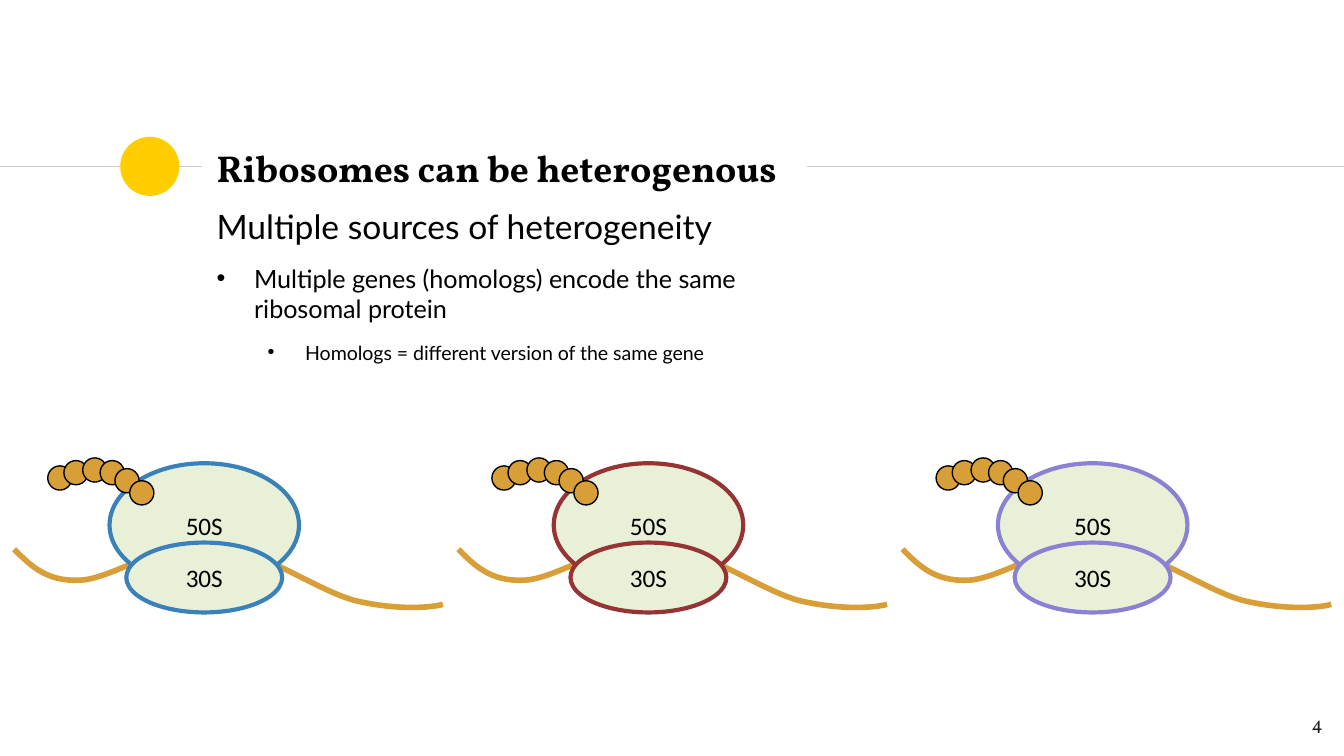
from pptx import Presentation
from pptx import util as u
from pptx.dml.color import RGBColor
from pptx.enum import shapes, text
from pptx.oxml import parse_xml
from pptx.oxml.ns import nsdecls, qn

BLACK = RGBColor(0x00, 0x00, 0x00)
INK = RGBColor(0x1D, 0x1D, 0x1B)
WHITE = RGBColor(0xFF, 0xFF, 0xFF)
GREY = RGBColor(0xCC, 0xCC, 0xCC)
YELLOW = RGBColor(0xFF, 0xCD, 0x00)
GREEN = RGBColor(0xE8, 0xF0, 0xD8)
OCHRE = RGBColor(0xD8, 0x9F, 0x39)
BLUE = RGBColor(0x3A, 0x81, 0xBA)
RED = RGBColor(0x96, 0x33, 0x34)
VIOLET = RGBColor(0x8B, 0x81, 0xD2)

COLS, ROWS = 100, 56.25
WIDTH, HEIGHT = u.Inches(10), u.Inches(5.625)
OVAL = shapes.MSO_SHAPE.OVAL
ALIGN = text.PP_ALIGN
STRAND = [(0, 6.8), (1.2, 8), (2.4, 9.2), (4.8, 9.1), (7.2, 9.1),
          (11.2, 6.1), (14.6, 6.4), (18, 6.6), (22.4, 9.8),
          (25.3, 10.6), (28.2, 11.3), (30.8, 11.2), (31.9, 10.9)]
BEADS = [(2.5, 0.6), (3.7, 0.2), (5.1, 0), (6.4, 0.2), (7.5, 0.8), (8.6, 1.7)]


def col(n):
    return round(WIDTH * n / COLS)


def row(n):
    return round(HEIGHT * n / ROWS)


def grid(x, y, w, h):
    return col(x), row(y), col(w), row(h)


def write(para, words, font="Lato", size=18, color=BLACK, bold=False,
          align=ALIGN.LEFT, after=0, bullet=None, indent=0):
    run = para.add_run()
    run.text = words
    face = run.font
    face.name, face.size, face.bold = font, u.Pt(size), bold
    face.color.rgb = color
    para.alignment = align
    para.space_after = u.Pt(after)
    if bullet:
        props = para._p.get_or_add_pPr()
        props.set("marL", str(col(indent)))
        props.set("indent", str(-col(2.8)))
        props.append(parse_xml(f'<a:buFont {nsdecls("a")} typeface="Arial"/>'))
        props.append(parse_xml(f'<a:buChar {nsdecls("a")} char="{bullet}"/>'))


def frame(parent, box, pad, anchor=text.MSO_ANCHOR.TOP):
    area = parent.add_textbox(*grid(*box)).text_frame
    area.word_wrap = True
    area.vertical_anchor = anchor
    area.margin_left = area.margin_right = col(1)
    area.margin_top = area.margin_bottom = row(pad)
    return area


def solid(parent, kind, box, fill, line=None, width=0.75):
    item = parent.add_shape(kind, *grid(*box))
    item.shadow.inherit = False
    item.fill.solid()
    item.fill.fore_color.rgb = fill
    if line is None:
        item.line.fill.background()
    else:
        item.line.color.rgb = line
        item.line.width = u.Pt(width)
    return item


def rule(parent, left, right, y):
    item = parent.add_connector(shapes.MSO_CONNECTOR.STRAIGHT,
                                col(left), row(y), col(right), row(y))
    item.line.color.rgb = GREY
    item.line.width = u.Pt(0.75)
    item._element.spPr.append(parse_xml(f'<a:effectLst {nsdecls("a")}/>'))


def header(parent, x, y, w, h):
    mid = y + h / 2
    rule(parent, x, x + 15, mid)
    solid(parent, OVAL, (x + 8.95, mid - 2.2, 4.4, 4.4), YELLOW)
    rule(parent, x + 57.6, x + w, mid)
    solid(parent, shapes.MSO_SHAPE.RECTANGLE, (x + 54.35, y, 5.6, h),
          WHITE, WHITE, 2)
    area = frame(parent, (x + 15.13, y, 45.4, 4.7), 1, text.MSO_ANCHOR.MIDDLE)
    write(area.paragraphs[0], "Ribosomes can be heterogenous",
          font="Vollkorn", size=20, bold=True)


def body(parent, x, y, w, h):
    area = frame(parent, (x, y, w, h), 0.5)
    area.auto_size = text.MSO_AUTO_SIZE.SHAPE_TO_FIT_TEXT
    write(area.paragraphs[0], "Multiple sources of heterogeneity", after=9)
    write(area.add_paragraph(),
          "Multiple genes (homologs) encode the same ribosomal protein",
          size=13.5, after=9, bullet="•", indent=2.8)
    para = area.add_paragraph()
    para.level = 1
    write(para, "Homologs = different version of the same gene",
          size=10.5, after=9, bullet="•", indent=6.6)


def bend(item):
    lines = list(item._element.iter(qn("a:lnTo")))
    for k in range(0, len(lines), 3):
        cubic = parse_xml(f'<a:cubicBezTo {nsdecls("a")}/>')
        lines[k].addprevious(cubic)
        for line in lines[k:k + 3]:
            cubic.append(line[0])
            line.getparent().remove(line)


def strand(parent, x, y):
    nodes = [(col(x + a), row(y + b)) for a, b in STRAND]
    pen = parent.build_freeform(*nodes[0])
    pen.add_line_segments(nodes[1:], close=False)
    item = pen.convert_to_shape()
    bend(item)
    item.shadow.inherit = False
    item.fill.background()
    item.line.color.rgb = OCHRE
    item.line.width = u.Pt(3)


def unit(parent, box, words, color):
    area = solid(parent, OVAL, box, GREEN, color, 2.25).text_frame
    area.vertical_anchor = text.MSO_ANCHOR.MIDDLE
    write(area.paragraphs[0], words, font="Calibri", size=13.5,
          align=ALIGN.CENTER)


def ribosome(slide, x, y, color):
    parent = slide.shapes.add_group_shape().shapes
    strand(parent, x, y)
    unit(parent, (x + 7.1, y + 0.4, 14.1, 9.2), "50S", color)
    unit(parent, (x + 8.35, y + 6.3, 11.6, 5.2), "30S", color)
    for a, b in BEADS:
        solid(parent, OVAL, (x + a, y + b, 1.8, 1.8), OCHRE, BLACK)


def footer(parent, x, y, w, h):
    area = frame(parent, (x, y, w, h), 1)
    write(area.paragraphs[0], "4", font="Vollkorn", size=10, color=INK,
          align=ALIGN.RIGHT)


def main():
    deck = Presentation()
    deck.slide_width, deck.slide_height = WIDTH, HEIGHT
    slide = deck.slides.add_slide(deck.slide_layouts[6])
    header(slide.shapes, 0, 10.13, COLS, 4.5)
    body(slide.shapes, 15.13, 14.84, 42.4, 12.9)
    for n, color in enumerate((BLUE, RED, VIOLET)):
        ribosome(slide, 1.05 + 33.05 * n, 34.07, color)
    footer(slide.shapes, 93.4, 52.1, 6, 4.1)
    deck.save("out.pptx")


if __name__ == "__main__":
    main()
